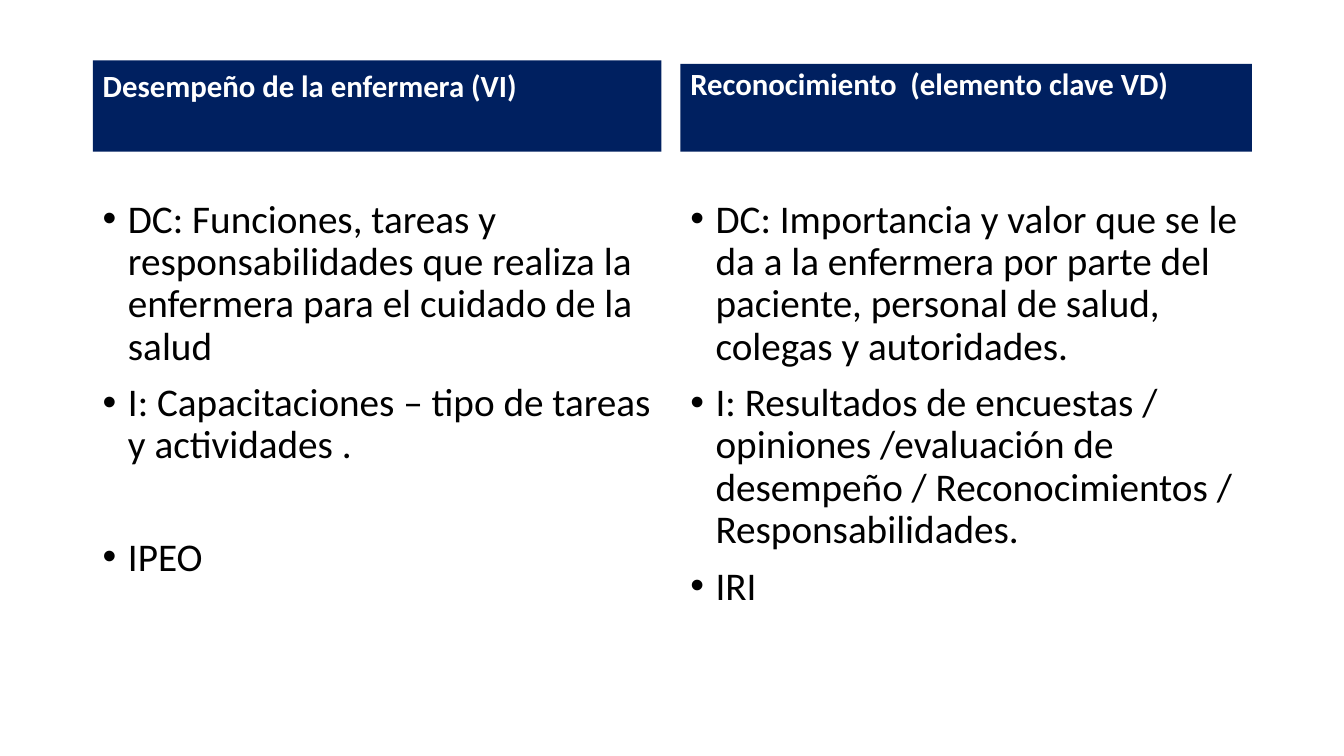
from dataclasses import dataclass

from lxml.etree import SubElement
from pptx import Presentation
from pptx.dml.color import RGBColor
from pptx.enum.shapes import MSO_SHAPE
from pptx.enum.text import MSO_ANCHOR, PP_ALIGN
from pptx.oxml.ns import qn
from pptx.util import Cm, Pt


@dataclass(frozen=True)
class Theme:
    font: str = "Calibri"
    navy: RGBColor = RGBColor(0x00, 0x20, 0x60)
    white: RGBColor = RGBColor(0xFF, 0xFF, 0xFF)
    black: RGBColor = RGBColor(0x00, 0x00, 0x00)
    heading_size: float = 22
    body_size: float = 28
    line_spacing: float = 0.9
    indent: float = 0.635


class ComparisonSlide:
    def __init__(self, slide, theme):
        self.slide = slide
        self.theme = theme

    def add_run(self, paragraph, text, size, color, bold=False):
        paragraph.alignment = PP_ALIGN.LEFT
        paragraph.line_spacing = self.theme.line_spacing
        run = paragraph.add_run()
        run.text = text
        run.font.name = self.theme.font
        run.font.size = Pt(size)
        run.font.bold = bold
        run.font.color.rgb = color

    def add_heading(self, left, top, width, height, text, inset):
        band = self.slide.shapes.add_shape(
            MSO_SHAPE.RECTANGLE, Cm(left), Cm(top), Cm(width), Cm(height)
        )
        band.shadow.inherit = False
        band.fill.solid()
        band.fill.fore_color.rgb = self.theme.navy
        band.line.fill.background()
        frame = band.text_frame
        frame.word_wrap = True
        frame.vertical_anchor = MSO_ANCHOR.TOP
        frame.margin_top = Cm(inset)
        self.add_run(
            frame.paragraphs[0], text, self.theme.heading_size, self.theme.white, True
        )

    def add_bullets(self, left, top, width, height, points):
        body = self.slide.shapes.add_textbox(Cm(left), Cm(top), Cm(width), Cm(height))
        frame = body.text_frame
        frame.word_wrap = True
        for index, (text, space_before) in enumerate(points):
            paragraph = frame.add_paragraph() if index else frame.paragraphs[0]
            paragraph.space_before = Pt(space_before)
            paragraph.line_spacing = self.theme.line_spacing
            properties = paragraph._p.get_or_add_pPr()
            properties.set("marL", str(Cm(self.theme.indent)))
            properties.set("indent", str(-Cm(self.theme.indent)))
            SubElement(properties, qn("a:buFont"), typeface="Arial")
            SubElement(properties, qn("a:buChar"), char="•")
            self.add_run(paragraph, text, self.theme.body_size, self.theme.black)


def main():
    presentation = Presentation()
    presentation.slide_width = Cm(33.87)
    presentation.slide_height = Cm(19.05)
    slide = presentation.slides.add_slide(presentation.slide_layouts[6])
    comparison = ComparisonSlide(slide, Theme())

    heading_bottom, body_top, body_height = 3.82, 4.9, 12.3
    variables = [
        (2.34, 14.33, 1.52, 0.28, "Desempeño de la enfermera (VI)", [
            ("DC: Funciones, tareas y responsabilidades que realiza la enfermera "
             "para el cuidado de la salud", 0),
            ("I: Capacitaciones – tipo de tareas y actividades .", 10),
            ("IPEO", 50),
        ]),
        (17.15, 14.4, 1.61, 0.13, "Reconocimiento  (elemento clave VD)", [
            ("DC: Importancia y valor que se le da a la enfermera por parte del "
             "paciente, personal de salud, colegas y autoridades.", 0),
            ("I: Resultados de encuestas / opiniones /evaluación de desempeño / "
             "Reconocimientos / Responsabilidades.", 10),
            ("IRI", 10),
        ]),
    ]
    for left, width, top, inset, heading, points in variables:
        comparison.add_heading(left, top, width, heading_bottom - top, heading, inset)
        comparison.add_bullets(left, body_top, width, body_height, points)

    presentation.save("out.pptx")


if __name__ == "__main__":
    main()
